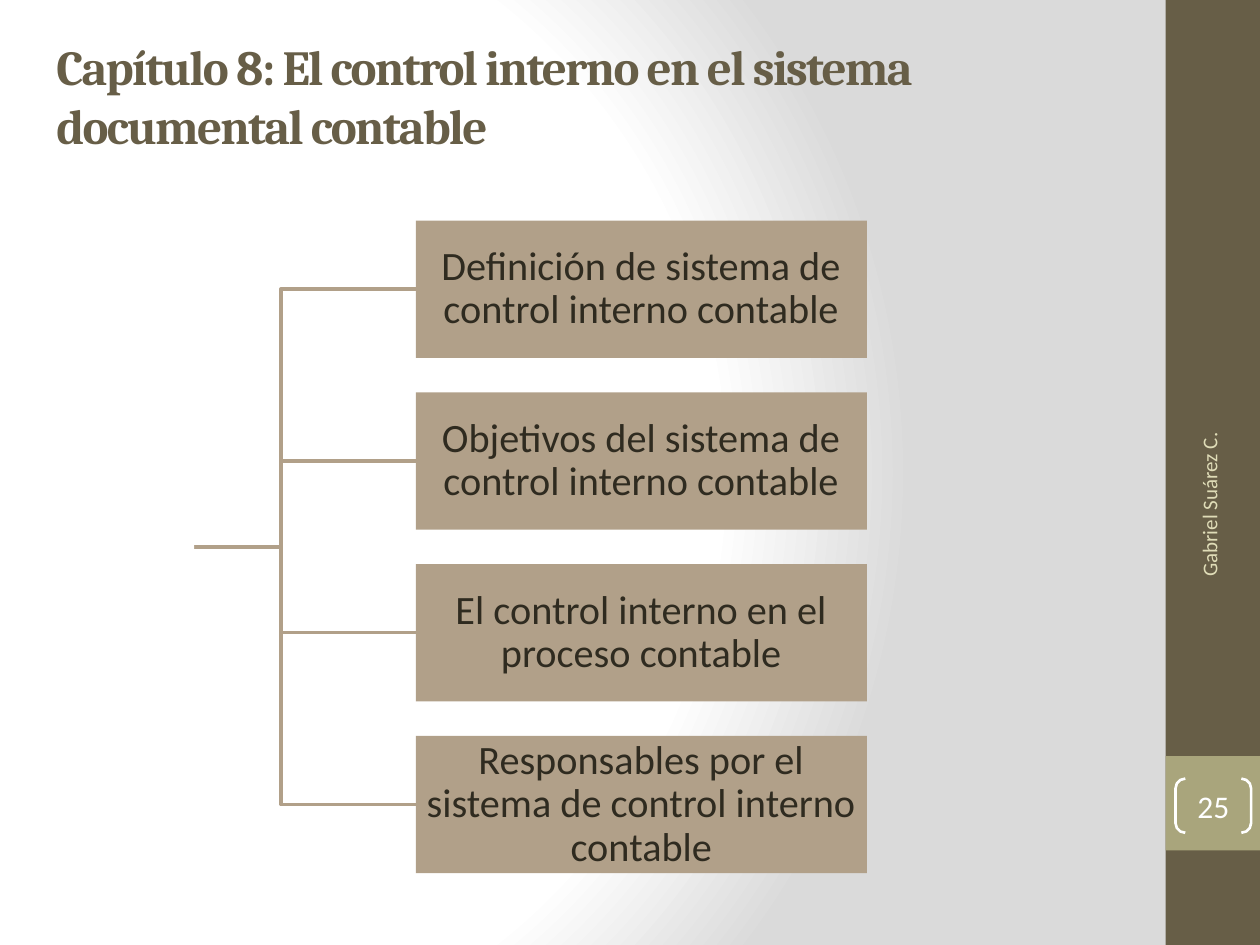
from pptx import Presentation
from pptx.dml.color import RGBColor
from pptx.enum.shapes import MSO_SHAPE
from pptx.enum.text import MSO_ANCHOR, PP_ALIGN
from pptx.oxml import parse_xml
from pptx.util import Inches, Pt

RECTANGLE, BRACKETS = MSO_SHAPE.RECTANGLE, MSO_SHAPE.DOUBLE_BRACKET
MIDDLE = MSO_ANCHOR.MIDDLE
LEFT, CENTER, RIGHT = PP_ALIGN.LEFT, PP_ALIGN.CENTER, PP_ALIGN.RIGHT
OLIVE, SAGE, TAN, WHITE = "675E47", "A9A57C", "B1A089", "FFFFFF"


def add_block(kind, left, top, width, height, fill=None):
    shape = slide.shapes.add_shape(
        kind, Inches(left), Inches(top), Inches(width), Inches(height))
    shape.shadow.inherit = False
    shape.line.fill.background()
    if fill:
        shape.fill.solid()
        shape.fill.fore_color.rgb = RGBColor.from_string(fill)
    else:
        shape.fill.background()
    return shape


def write(shape, text, size, color, align, font="Calibri", margin=None):
    frame = shape.text_frame
    frame.word_wrap = True
    frame.vertical_anchor = MIDDLE
    if margin is not None:
        frame.margin_left = frame.margin_right = Inches(margin)
        frame.margin_top = frame.margin_bottom = Inches(margin)
    paragraph = frame.paragraphs[0]
    paragraph.alignment = align
    run = paragraph.add_run()
    run.text = text
    run.font.name = font
    run.font.size = Pt(size)
    run.font.color.rgb = RGBColor.from_string(color)
    return paragraph


presentation = Presentation()
presentation.slide_width = Inches(10)
presentation.slide_height = Inches(7.5)
slide = presentation.slides.add_slide(presentation.slide_layouts[6])

# Radial background gradient
background_fill = slide.background.fill
background_fill.solid()
solid = slide.background._cSld.bg.bgPr[0]
stops = "".join(
    f'<a:gs pos="{position * 1000}"><a:srgbClr val="{color}"/></a:gs>'
    for position, color in ((0, WHITE), (75, WHITE), (100, "DADADA")))
solid.getparent().replace(solid, parse_xml(
    '<a:gradFill xmlns:a="http://schemas.openxmlformats.org/drawingml/2006/main"'
    f' rotWithShape="1"><a:gsLst>{stops}</a:gsLst><a:path path="circle">'
    '<a:fillToRect l="20000" t="50000" r="100000" b="50000"/>'
    '</a:path></a:gradFill>'))

# Side band with page number block
add_block(RECTANGLE, 9.25, 0, 0.75, 7.5, OLIVE)
add_block(RECTANGLE, 9.25, 6, 0.75, 0.75, SAGE)

# Title
title = slide.shapes.add_textbox(
    Inches(0.35), Inches(0.13), Inches(8.33), Inches(1.25))
title_run = write(
    title, "Capítulo 8: El control interno en el sistema documental contable",
    28, OLIVE, LEFT, "Cambria").runs[0]
title_run.font.bold = True
title_run.font._element.set("spc", "-100")

# Author, reading upwards
author = slide.shapes.add_textbox(
    Inches(8.3), Inches(4.43), Inches(2.59), Inches(0.4))
author.rotation = 270
write(author, "Gabriel Suárez C.", 12, "DFDCB7", RIGHT)

# Page number in brackets
number = add_block(BRACKETS, 9.33, 6.18, 0.6, 0.43)
number.adjustments[0] = 0.18
number.line.color.rgb = RGBColor.from_string(WHITE)
number.line.width = Pt(1.5)
write(number, "25", 18, WHITE, CENTER, margin=0)

# Tree geometry
topics = [
    "Definición de sistema de control interno contable",
    "Objetivos del sistema de control interno contable",
    "El control interno en el proceso contable",
    "Responsables por el sistema de control interno contable",
]
box_left, box_width, box_height = 3.3, 3.58, 1.09
first_top, last_top = 1.75, 5.84
pitch = (last_top - first_top) / (len(topics) - 1)
root_x, root_y, elbow_x = 1.16, 4.34, 2.23
tops = [first_top + pitch * index for index in range(len(topics))]

# Branches from the root to each box
for top in reversed(tops):
    branch_y = top + box_height / 2
    builder = slide.shapes.build_freeform(Inches(root_x), Inches(root_y))
    builder.add_line_segments(
        [(Inches(x), Inches(y)) for x, y in
         ((elbow_x, root_y), (elbow_x, branch_y), (box_left, branch_y))],
        close=False)
    branch = builder.convert_to_shape()
    branch.shadow.inherit = False
    branch.fill.background()
    branch.line.color.rgb = RGBColor.from_string(TAN)
    branch.line.width = Pt(2)

# Empty root box over the start of the branches
add_block(RECTANGLE, 0.69, 4.3, 0.85, 0.09, WHITE)

# Topic boxes
for top, topic in zip(tops, topics):
    box = add_block(RECTANGLE, box_left, top, box_width, box_height, TAN)
    paragraph = write(box, topic, 23, "2F2B20", CENTER, margin=0.02)
    paragraph.line_spacing = 0.9

presentation.save("out.pptx")
